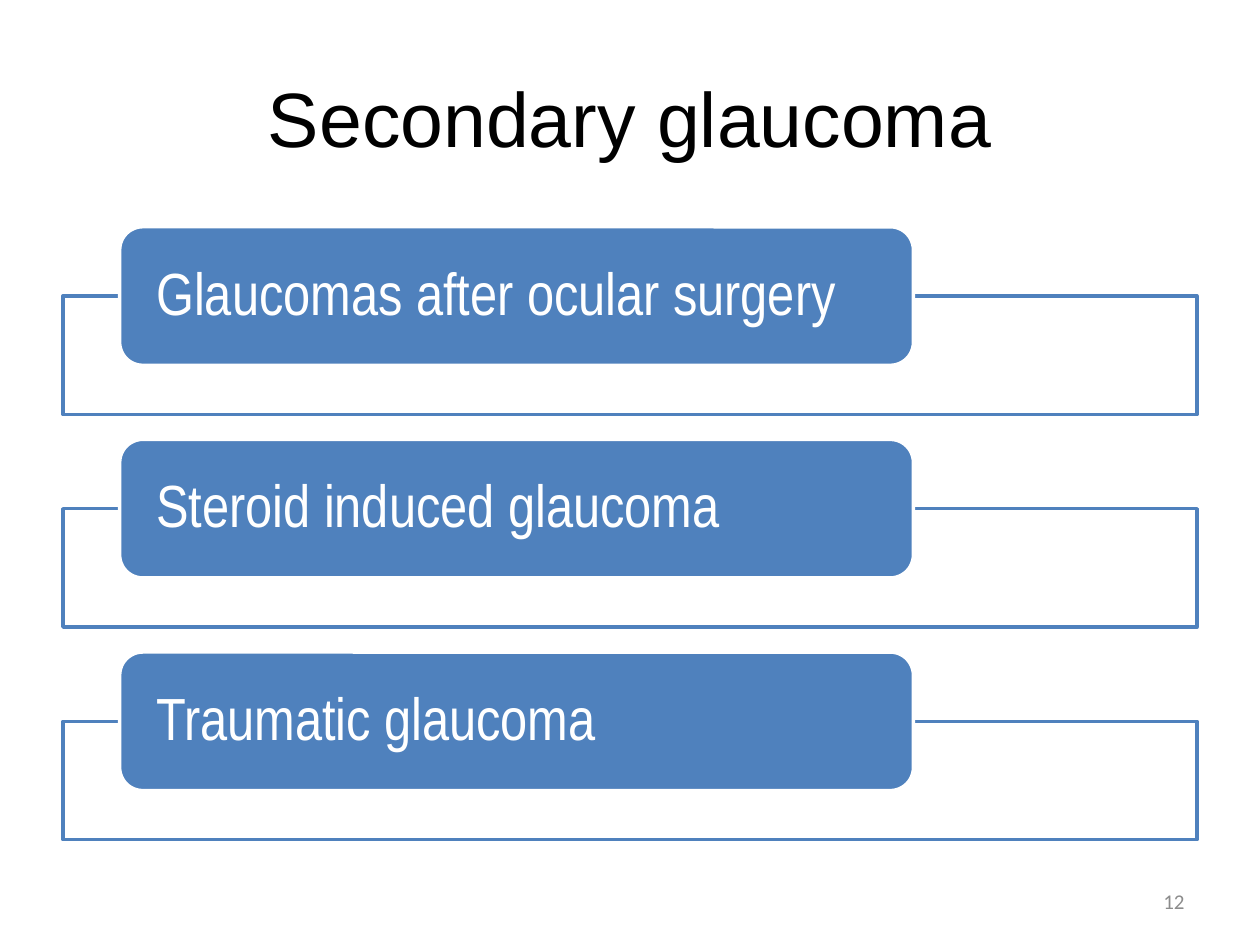
import pptx
import pptx.util
import pptx.dml.color
import pptx.enum.shapes
import pptx.enum.text
import lxml.etree

WIDE, HIGH = 10, 7.5
EDGE = 0.05 * WIDE
SPAN = WIDE - 2 * EDGE
TOP = 0.24 * HIGH
STEP = 0.225 * HIGH
BLUE, WHITE = "4F81BD", "FFFFFF"
KIND = pptx.enum.shapes.MSO_SHAPE
ALIGN = pptx.enum.text.PP_ALIGN
TOPICS = [
    "Glaucomas after ocular surgery",
    "Steroid induced glaucoma",
    "Traumatic glaucoma",
]


def tint(code):
    return pptx.dml.color.RGBColor.from_string(code)


def place(box):
    return [pptx.util.Inches(side) for side in box]


def write(slide, words, box, size, font, color, align=ALIGN.LEFT,
          pad=(0.1, 0.05), lead=1.0):
    area = slide.shapes.add_textbox(*place(box))
    frame = area.text_frame
    frame.word_wrap = True
    frame.vertical_anchor = pptx.enum.text.MSO_ANCHOR.MIDDLE
    frame.margin_left = frame.margin_right = pptx.util.Inches(pad[0])
    frame.margin_top = frame.margin_bottom = pptx.util.Inches(pad[1])
    line = frame.paragraphs[0]
    line.alignment = align
    line.line_spacing = lead
    run = line.add_run()
    run.text = words
    run.font.size = pptx.util.Pt(size)
    run.font.name = font
    run.font.color.rgb = tint(color)


def panel(slide, kind, box, fill, edge):
    shape = slide.shapes.add_shape(kind, *place(box))
    shape.shadow.inherit = False
    shape.fill.solid()
    shape.fill.fore_color.rgb = tint(fill)
    shape.line.color.rgb = tint(edge)
    shape.line.width = pptx.util.Pt(2)
    return shape


def fade(shape, share):
    tag = pptx.oxml.ns.qn
    color = shape._element.spPr.find(tag("a:solidFill")).find(tag("a:srgbClr"))
    lxml.etree.SubElement(color, tag("a:alpha")).set("val", str(share * 1000))


def topic(slide, words, top):
    left, width, height = EDGE + 0.05 * SPAN, 0.7 * SPAN, 1.1
    gap = 0.05
    frame = panel(slide, KIND.RECTANGLE,
                  (EDGE, top + height / 2, SPAN, 0.94), WHITE, BLUE)
    fade(frame, 90)
    panel(slide, KIND.ROUNDED_RECTANGLE,
          (left, top, width, height), BLUE, WHITE)
    write(slide, words,
          (left + gap, top + gap, width - 2 * gap, height - 2 * gap),
          size=34, font="Arial Narrow", color=WHITE, pad=(0.24, 0), lead=0.9)


def main():
    deck = pptx.Presentation()
    deck.slide_width, deck.slide_height = place((WIDE, HIGH))
    slide = deck.slides.add_slide(deck.slide_layouts[6])
    write(slide, "Secondary glaucoma", (EDGE, 0.04 * HIGH, SPAN, HIGH / 6),
          size=44, font="Arial", color="000000", align=ALIGN.CENTER)
    for row, words in enumerate(TOPICS):
        topic(slide, words, TOP + row * STEP)
    width = 2.33
    write(slide, "12", (WIDE - EDGE - width, 6.95, width, 0.4),
          size=12, font="Calibri", color="8C8C8C", align=ALIGN.RIGHT)
    deck.save("out.pptx")


if __name__ == "__main__":
    main()
